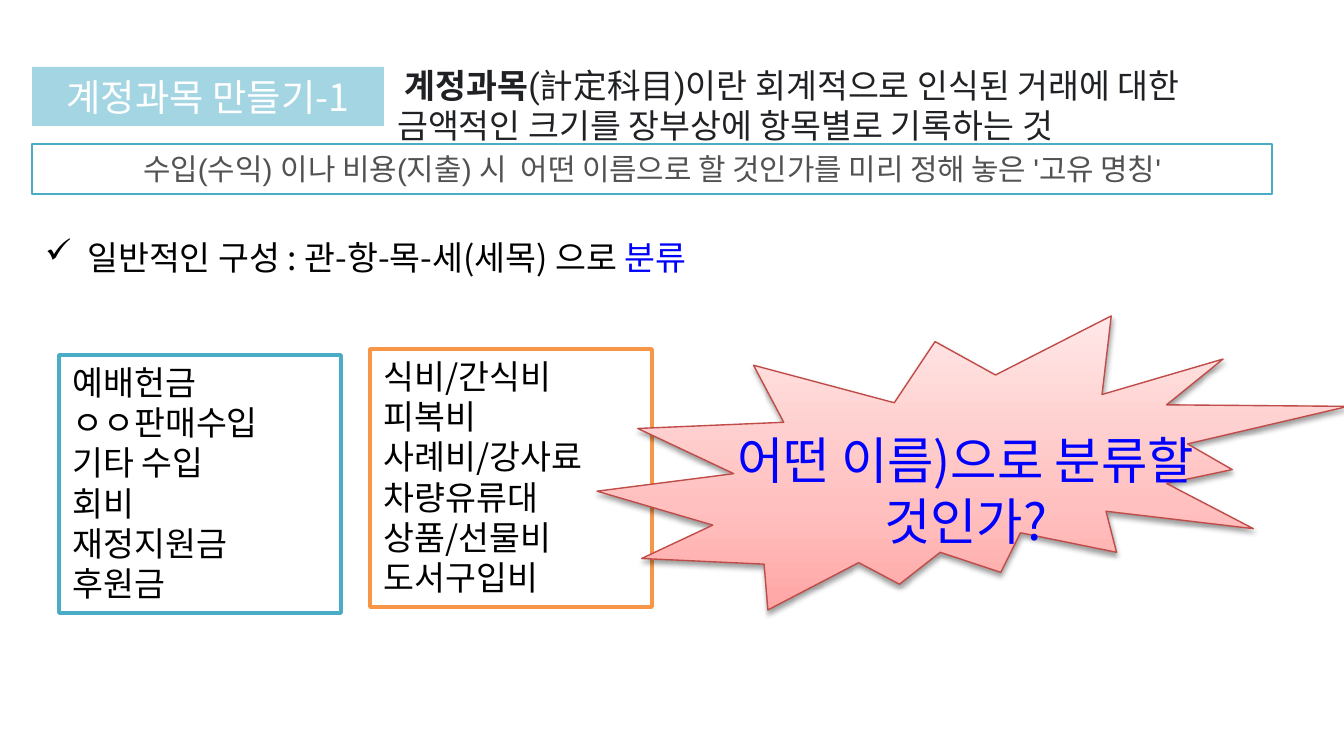
from copy import deepcopy

from lxml.etree import SubElement
from pptx import Presentation
from pptx.dml.color import RGBColor
from pptx.enum.shapes import MSO_SHAPE
from pptx.enum.text import MSO_ANCHOR, MSO_AUTO_SIZE, PP_ALIGN
from pptx.oxml.ns import qn
from pptx.util import Emu, Pt

EMU_PER_PX = 914400 / 134.4
KOREAN = "Noto Sans CJK KR"
TEAL, ORANGE, BLUE = "4BACC6", "F79646", "0000FF"
WHITE, BLACK = "FFFFFF", "000000"
INCOME = ["예배헌금", "ㅇㅇ판매수입", "기타 수입", "회비", "재정지원금", "후원금"]
EXPENSES = ["식비/간식비", "피복비", "사례비/강사료", "차량유류대", "상품/선물비", "도서구입비"]


def px(length):
    """Turn a length in px into EMU."""
    return Emu(round(length * EMU_PER_PX))


def paint(color, hex_color):
    """Give a colour object the value of a hex string."""
    color.rgb = RGBColor.from_string(hex_color)


def place(box, left, top, width, height):
    """Move and size a box."""
    box.left, box.top, box.width, box.height = map(px, (left, top, width, height))


def decorate(box, fill, line=None, line_width=0.75):
    """Give a box a plain fill and an optional outline."""
    box.fill.solid()
    paint(box.fill.fore_color, fill)
    if line:
        paint(box.line.color, line)
        box.line.width = Pt(line_width)
    else:
        box.line.fill.background()


def style_span(span, size, color, font=KOREAN, bold=False):
    """Format one run for Latin and Korean letters."""
    span.font.size = Pt(size)
    span.font.name = font
    span.font.bold = bold
    paint(span.font.color, color)
    SubElement(span.font._element, qn("a:ea"), typeface=KOREAN)


def write(box, text, size, color, font=KOREAN, align=PP_ALIGN.LEFT, anchor=MSO_ANCHOR.TOP):
    """Fill a box with text in one style."""
    frame = box.text_frame
    frame.text = text
    frame.word_wrap = True
    frame.auto_size = MSO_AUTO_SIZE.NONE
    frame.vertical_anchor = anchor
    for para in frame.paragraphs:
        para.alignment = align
        para.space_before = Pt(0)
        para.line_spacing = Pt(round(size * 1.2, 1))
        for span in para.runs:
            style_span(span, size, color, font)


def append_span(box, text, size, color, font=KOREAN, bold=False):
    """Add a run to the first paragraph of a box."""
    span = box.text_frame.paragraphs[0].add_run()
    span.text = text
    style_span(span, size, color, font, bold)


def set_bullet(para, symbol=None, indent=0):
    """Set or remove the bullet of a paragraph."""
    properties = para._p.get_or_add_pPr()
    properties.set("marL", str(px(indent)))
    properties.set("indent", str(-px(indent)))
    if symbol:
        SubElement(properties, qn("a:buChar"), char=symbol)
    else:
        SubElement(properties, qn("a:buNone"))


def add_box(page, bounds, preset=MSO_SHAPE.RECTANGLE):
    """Add a preset shape without a shadow."""
    box = page.shapes.add_shape(preset, *map(px, bounds))
    box.shadow.inherit = False
    return box


def add_text(page, bounds, *style, **options):
    """Add a text box in one style."""
    box = page.shapes.add_textbox(*map(px, bounds))
    write(box, *style, **options)
    return box


def fill_title(box):
    """Set the title on its translucent band."""
    place(box, 32, 67, 352, 59)
    decorate(box, TEAL)
    color = box.fill._xPr.find(qn("a:solidFill"))[0]
    SubElement(color, qn("a:alpha"), val="50000")
    write(box, "계정과목 만들기-1", 20, WHITE, align=PP_ALIGN.CENTER, anchor=MSO_ANCHOR.MIDDLE)


def fill_list(box, left, top, items, outline):
    """Set an outlined list of account names."""
    place(box, left, top, 282, 258)
    decorate(box, WHITE, outline, 2)
    write(box, "\n".join(items), 18, BLACK)
    for para in box.text_frame.paragraphs:
        set_bullet(para)


def add_burst(page):
    """Add the star burst with its gradient and shadow."""
    burst = add_box(page, (597, 316, 751, 294), MSO_SHAPE.EXPLOSION2)
    burst.fill.gradient()
    burst.fill.gradient_angle = 90
    properties = burst._element.spPr
    stops = properties.find(qn("a:gradFill")).find(qn("a:gsLst"))
    stops.insert(1, deepcopy(stops[0]))
    shades = [(0, "FFA6A5"), (0.35, "FFC0BF"), (1, "FFE7E7")]
    for stop, (position, shade) in zip(burst.fill.gradient_stops, shades):
        stop.position = position
        paint(stop.color, shade)
    paint(burst.line.color, "BF4C48")
    burst.line.width = Pt(0.75)
    shadow = SubElement(
        properties.find(qn("a:effectLst")), qn("a:outerShdw"),
        blurRad=str(Pt(3.1)), dist=str(Pt(1.6)), dir="5400000", rotWithShape="0",
    )
    color = SubElement(shadow, qn("a:srgbClr"), val=BLACK)
    SubElement(color, qn("a:alpha"), val="38000")


def main():
    """Build the slide on account titles."""
    deck = Presentation()
    deck.slide_width, deck.slide_height = px(1344), px(756)
    page = deck.slides.add_slide(deck.slide_layouts[3])
    title, income, expenses = page.placeholders
    fill_title(title)
    fill_list(income, 59, 355, INCOME, TEAL)
    fill_list(expenses, 370, 349, EXPENSES, ORANGE)

    structure = add_box(page, (32, 230, 939, 54))
    decorate(structure, WHITE)
    write(structure, "일반적인 구성 : 관-항-목-세(세목) 으로 ", 18, BLACK)
    append_span(structure, "분류", 18, BLUE)
    set_bullet(structure.text_frame.paragraphs[0], "✓", 42)

    definition = add_text(page, (384, 58, 888, 95), " ", 18, "202124", font="Roboto")
    append_span(definition, "계정과목", 18, "202124", "Roboto", bold=True)
    append_span(
        definition,
        "(計定科目)이란 회계적으로 인식된 거래에 대한 금액적인 크기를 장부상에 항목별로 기록하는 것",
        18, "202124", "Roboto",
    )

    meaning = add_box(page, (32, 144, 1240, 50))
    decorate(meaning, WHITE, TEAL)
    write(
        meaning,
        "수입(수익) 이나 비용(지출) 시  어떤 이름으로 할 것인가를 미리 정해 놓은 '고유 명칭'",
        16, "525252", "Arial", PP_ALIGN.CENTER, MSO_ANCHOR.MIDDLE,
    )

    add_burst(page)
    add_text(
        page, (710, 423, 511, 136), "어떤 이름)으로 분류할 것인가?", 27, BLUE,
        align=PP_ALIGN.CENTER,
    )
    deck.save("out.pptx")


if __name__ == "__main__":
    main()
